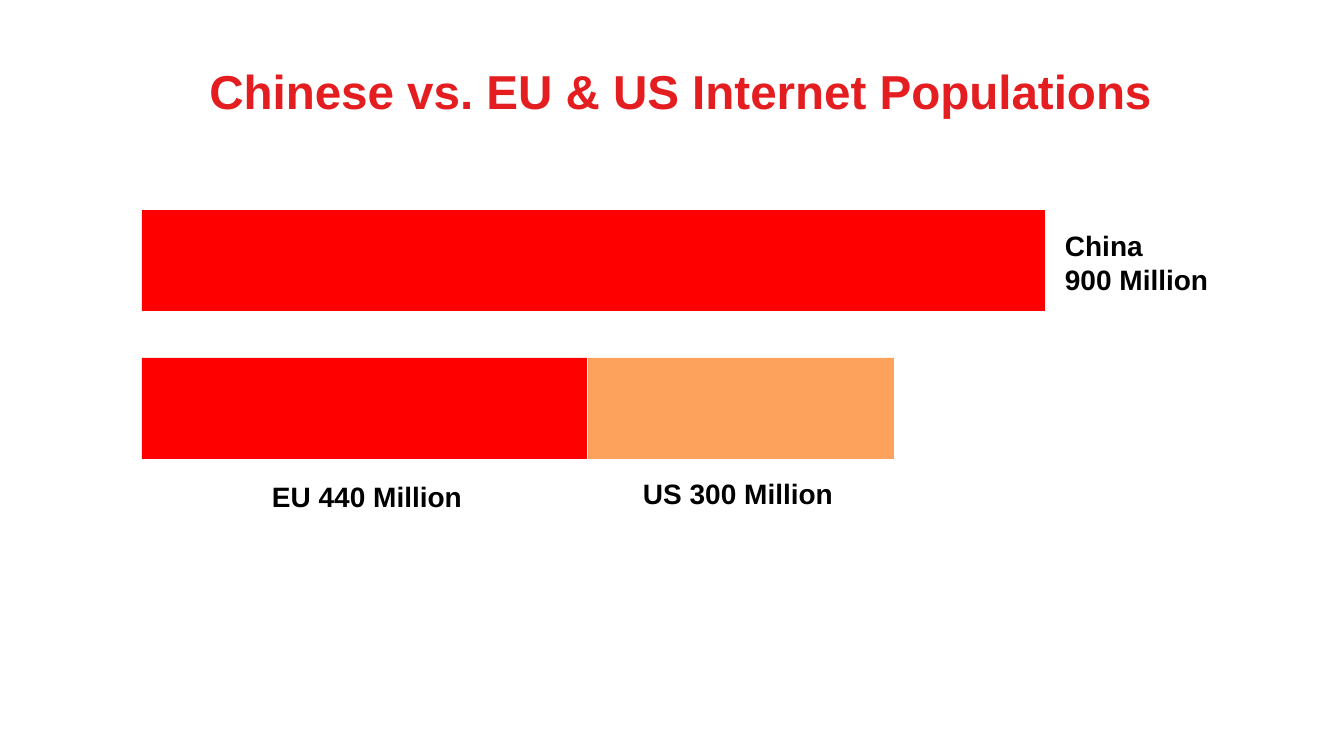
from pptx import Presentation
from pptx.dml.color import RGBColor
from pptx.enum.shapes import MSO_SHAPE as Shape
from pptx.enum.text import MSO_ANCHOR as Anchor, MSO_AUTO_SIZE as AutoSize, PP_ALIGN as Align
from pptx.oxml.ns import qn
from pptx.util import Pt
from lxml.etree import SubElement

PX = 914400 / 100.8


def box(*lengths):
    return [round(length * PX) for length in lengths]


def write(holder, text, size=20, color="000000", align=Align.LEFT, anchor=Anchor.TOP, spacing=1.0):
    frame = holder.text_frame
    frame.word_wrap = True
    frame.auto_size = AutoSize.NONE
    frame.vertical_anchor = anchor
    frame.text = text
    for paragraph in frame.paragraphs:
        paragraph.alignment = align
        paragraph.line_spacing = spacing
        font = paragraph.runs[0].font
        font.name = "Arial"
        font.size = Pt(size)
        font.bold = True
        font.color.rgb = RGBColor.from_string(color)


deck = Presentation()
deck.slide_width, deck.slide_height = box(1344, 756)
slide = deck.slides.add_slide(deck.slide_layouts[5])

headline = slide.shapes.title
headline.left, headline.top, headline.width, headline.height = box(83, 51, 1209, 74)
write(headline, "Chinese vs. EU & US Internet Populations ", size=34, color="E41E20",
      align=Align.CENTER, anchor=Anchor.BOTTOM, spacing=0.9)

populations = [
    ("China\n900 Million", (142, 210, 903, 101), "FF0000", 100, (1055, 224, 218, 78)),
    ("EU 440 Million", (142, 358, 445, 101), "FF0000", 100, (262, 475, 221, 44)),
    ("US 300 Million", (588, 358, 306, 101), "FC8E3A", 82, (633, 472, 221, 44)),
]
for caption, bar_place, color, opacity, caption_place in populations:
    bar = slide.shapes.add_shape(Shape.RECTANGLE, *box(*bar_place))
    bar.shadow.inherit = False
    bar.line.fill.background()
    bar.fill.solid()
    bar.fill.fore_color.rgb = RGBColor.from_string(color)
    if opacity < 100:
        tint = bar.element.spPr.find(qn("a:solidFill")).find(qn("a:srgbClr"))
        SubElement(tint, qn("a:alpha"), val=str(opacity * 1000))
    write(slide.shapes.add_textbox(*box(*caption_place)), caption)

deck.save("out.pptx")
